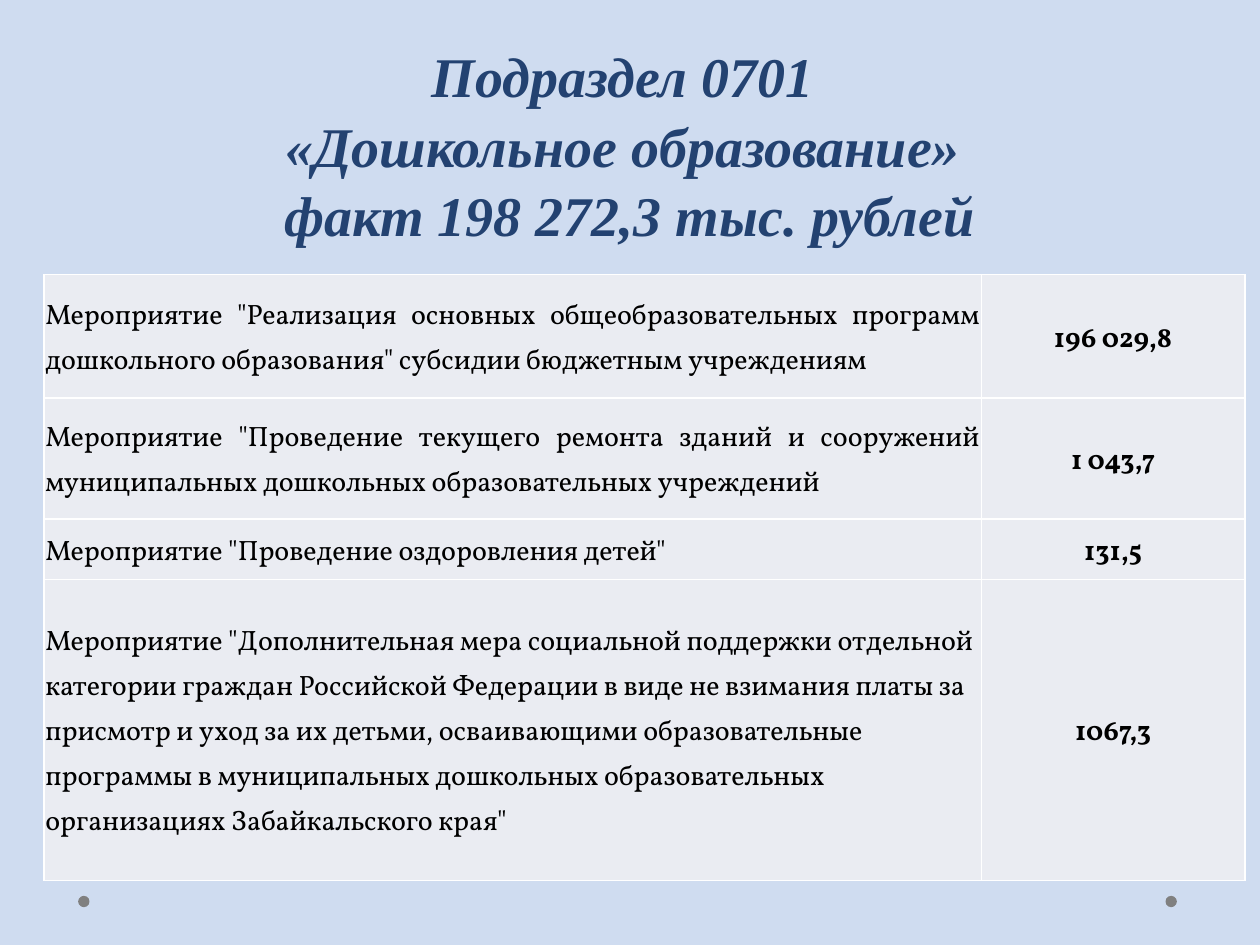
from lxml.etree import SubElement
from pptx import Presentation
from pptx.dml.color import RGBColor
from pptx.enum.shapes import MSO_SHAPE
from pptx.enum.text import MSO_ANCHOR, PP_ALIGN
from pptx.oxml.ns import qn
from pptx.util import Inches, Pt

TITLE_LINES = [
    "Подраздел 0701 ",
    "«Дошкольное образование» ",
    "факт 198 272,3 тыс. рублей",
]
# Measure, its alignment, amount, row height
MEASURES = [
    ('Мероприятие "Реализация основных общеобразовательных программ '
     'дошкольного образования" субсидии бюджетным учреждениям',
     PP_ALIGN.JUSTIFY, "196 029,8", 0.98),
    ('Мероприятие "Проведение текущего ремонта зданий и сооружений '
     'муниципальных дошкольных образовательных учреждений',
     PP_ALIGN.JUSTIFY, "1 043,7", 0.96),
    ('Мероприятие "Проведение оздоровления детей"',
     PP_ALIGN.JUSTIFY, "131,5", 0.48),
    ('Мероприятие "Дополнительная мера социальной поддержки отдельной '
     'категории граждан Российской Федерации в виде не взимания платы за '
     'присмотр и уход за их детьми, осваивающими образовательные программы '
     'в муниципальных дошкольных образовательных организациях '
     'Забайкальского края"',
     PP_ALIGN.LEFT, "1067,3", 2.39),
]
COLUMN_WIDTHS = [7.44, 2.09]


def color(value):
    return RGBColor.from_string(value)


def paint(fill, value):
    fill.solid()
    fill.fore_color.rgb = color(value)


def add_run(paragraph, text, font_name, size, value, bold=False, italic=False):
    run = paragraph.add_run()
    run.text = text
    font = run.font
    font.name, font.size = font_name, Pt(size)
    font.bold, font.italic = bold, italic
    font.color.rgb = color(value)


def add_dot(slide, left):
    dot = slide.shapes.add_shape(MSO_SHAPE.OVAL, Inches(left), Inches(7.11),
                                 Inches(0.09), Inches(0.09))
    dot.shadow.inherit = False
    paint(dot.fill, "808080")
    dot.line.fill.background()


def fill_title(title):
    title.left, title.top = Inches(0.5), Inches(0.29)
    title.width, title.height = Inches(9), Inches(1.73)
    title.text_frame.vertical_anchor = MSO_ANCHOR.BOTTOM
    paragraph = title.text_frame.paragraphs[0]
    paragraph.alignment = PP_ALIGN.CENTER
    paragraph.line_spacing = 1.04
    for index, line in enumerate(TITLE_LINES):
        if index:
            paragraph.add_line_break()
        add_run(paragraph, line, "Times New Roman", 32, "234271", True, True)


def add_borders(cell, value, width):
    properties = cell._tc.get_or_add_tcPr()
    for side in ("a:lnL", "a:lnR", "a:lnT", "a:lnB"):
        line = SubElement(properties, qn(side), w=str(Pt(width)))
        SubElement(SubElement(line, qn("a:solidFill")), qn("a:srgbClr"), val=value)


def fill_cell(cell, text, alignment, bold):
    add_borders(cell, "FFFFFF", 1)
    paint(cell.fill, "EAECF2")
    cell.vertical_anchor = MSO_ANCHOR.MIDDLE
    cell.margin_left = cell.margin_right = cell.margin_top = Inches(0.01)
    cell.margin_bottom = 0
    paragraph = cell.text_frame.paragraphs[0]
    paragraph.alignment = alignment
    paragraph.line_spacing = 1.15
    add_run(paragraph, text, "Vollkorn", 16, "000000", bold)


def add_measures_table(slide):
    height = sum(measure[-1] for measure in MEASURES)
    table = slide.shapes.add_table(
        len(MEASURES), len(COLUMN_WIDTHS), Inches(0.35), Inches(2.18),
        Inches(sum(COLUMN_WIDTHS)), Inches(height)).table
    table.first_row = table.horz_banding = False
    for column, width in zip(table.columns, COLUMN_WIDTHS):
        column.width = Inches(width)
    for row, (measure, alignment, amount, row_height) in zip(table.rows, MEASURES):
        row.height = Inches(row_height)
        fill_cell(row.cells[0], measure, alignment, bold=False)
        fill_cell(row.cells[1], amount, PP_ALIGN.CENTER, bold=True)


def main():
    presentation = Presentation()
    presentation.slide_width, presentation.slide_height = Inches(10), Inches(7.5)
    title_only = presentation.slide_layouts[5]
    slide = presentation.slides.add_slide(title_only)
    paint(slide.background.fill, "CFDCF0")
    for left in (9.25, 0.62):
        add_dot(slide, left)
    fill_title(slide.shapes.title)
    add_measures_table(slide)
    presentation.save("out.pptx")


if __name__ == "__main__":
    main()
